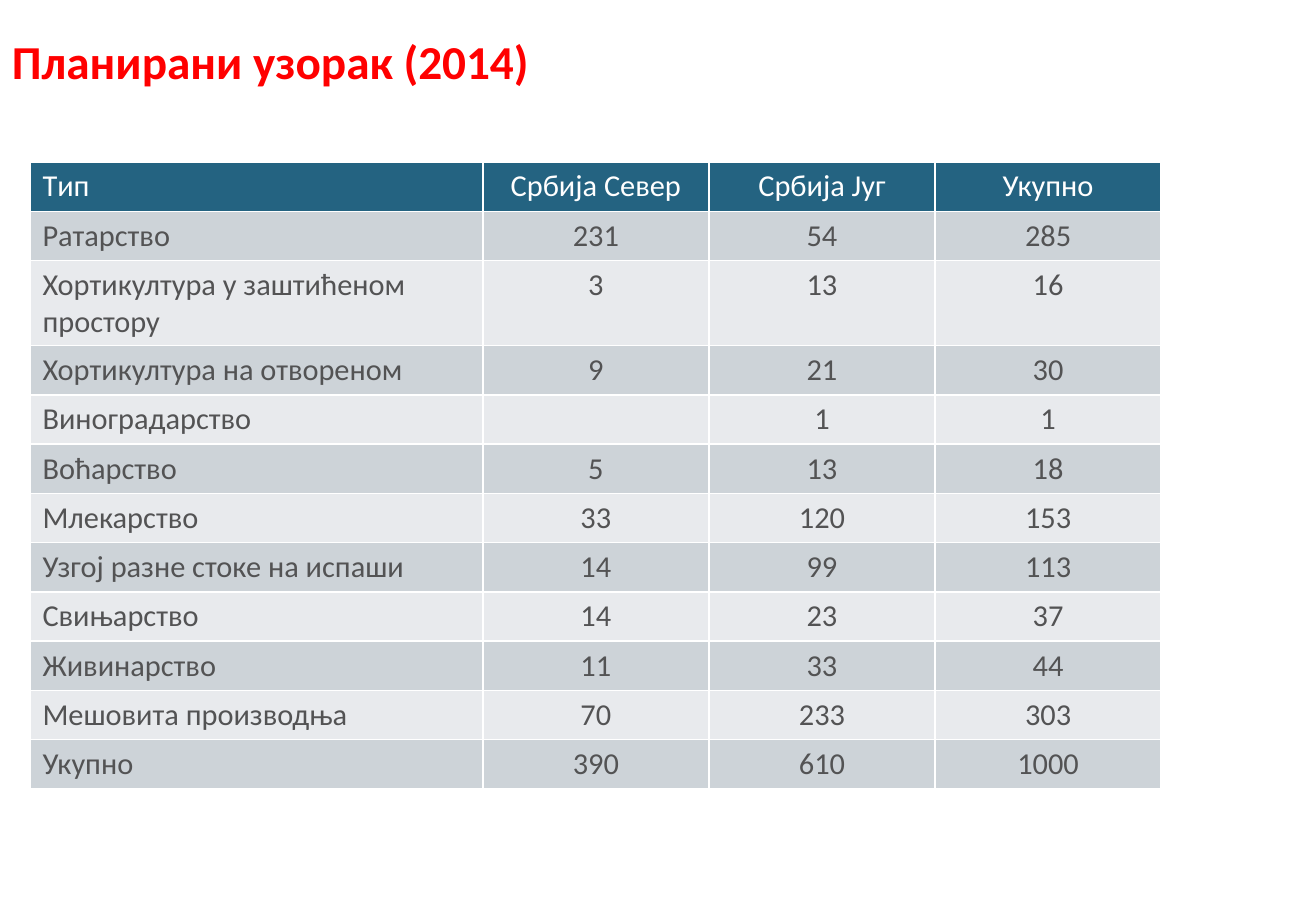
from lxml.etree import SubElement
from pptx import Presentation
from pptx.dml.color import RGBColor
from pptx.enum.text import MSO_ANCHOR, PP_ALIGN
from pptx.oxml.ns import qn
from pptx.util import Pt

TITLE = "Планирани узорак (2014)"
HEADER = ("Tип", "Србија Север", "Србија Југ", "Укупно")
SAMPLE = [
    ("Ратарство", 231, 54, 285),
    ("Хортикултура у заштићеном простору", 3, 13, 16),
    ("Хортикултура на отвореном", 9, 21, 30),
    ("Виноградарство", "", 1, 1),
    ("Воћарство", 5, 13, 18),
    ("Млекарство", 33, 120, 153),
    ("Узгој разне стоке на испаши", 14, 99, 113),
    ("Свињарство", 14, 23, 37),
    ("Живинарство", 11, 33, 44),
    ("Мешовита производња", 70, 233, 303),
    ("Укупно", 390, 610, 1000),
]
COLORS = {
    "title": "FF0000",
    "header": "246381",
    "odd": "CDD3D8",
    "even": "E8EAED",
    "body_text": "535354",
    "white": "FFFFFF",
}
FONT = "Calibri"
TYPE_WIDTH, COUNT_WIDTH, ROW_HEIGHT = 268.2, 134.05, 29.2


def color(name):
    return RGBColor.from_string(COLORS[name])


def style_font(paragraph, size, color_name, bold=False):
    font = paragraph.font
    font.name, font.size, font.bold = FONT, Pt(size), bold
    font.color.rgb = color(color_name)


def add_borders(cell):
    """Draw a thin white line on each side, placed ahead of the cell fill."""
    properties = cell._tc.get_or_add_tcPr()
    for side in ("a:lnL", "a:lnR", "a:lnT", "a:lnB"):
        line = SubElement(properties, qn(side), w=str(Pt(1)))
        line_fill = SubElement(line, qn("a:solidFill"))
        SubElement(line_fill, qn("a:srgbClr"), val=COLORS["white"])


def add_title(slide):
    title = slide.shapes.add_textbox(Pt(0), Pt(12), Pt(528), Pt(48)).text_frame
    title.word_wrap = True
    title.vertical_anchor = MSO_ANCHOR.MIDDLE
    title.text = TITLE
    style_font(title.paragraphs[0], 28, "title", bold=True)


def add_sample_table(slide):
    rows = [HEADER, *SAMPLE]
    widths = [TYPE_WIDTH] + [COUNT_WIDTH] * (len(HEADER) - 1)
    table = slide.shapes.add_table(
        len(rows), len(HEADER), Pt(18), Pt(96),
        Pt(sum(widths)), Pt(ROW_HEIGHT * len(rows)),
    ).table
    for column, width in zip(table.columns, widths):
        column.width = Pt(width)
    for r, values in enumerate(rows):
        table.rows[r].height = Pt(ROW_HEIGHT)
        band = "header" if r == 0 else "odd" if r % 2 else "even"
        for c, value in enumerate(values):
            cell = table.cell(r, c)
            add_borders(cell)
            cell.fill.solid()
            cell.fill.fore_color.rgb = color(band)
            cell.text = str(value)
            paragraph = cell.text_frame.paragraphs[0]
            paragraph.alignment = PP_ALIGN.CENTER if c else PP_ALIGN.LEFT
            style_font(paragraph, 18, "body_text" if r else "white")


def main():
    presentation = Presentation()
    presentation.slide_width, presentation.slide_height = Pt(780), Pt(540)
    slide = presentation.slides.add_slide(presentation.slide_layouts[6])
    add_title(slide)
    add_sample_table(slide)
    presentation.save("out.pptx")


if __name__ == "__main__":
    main()
